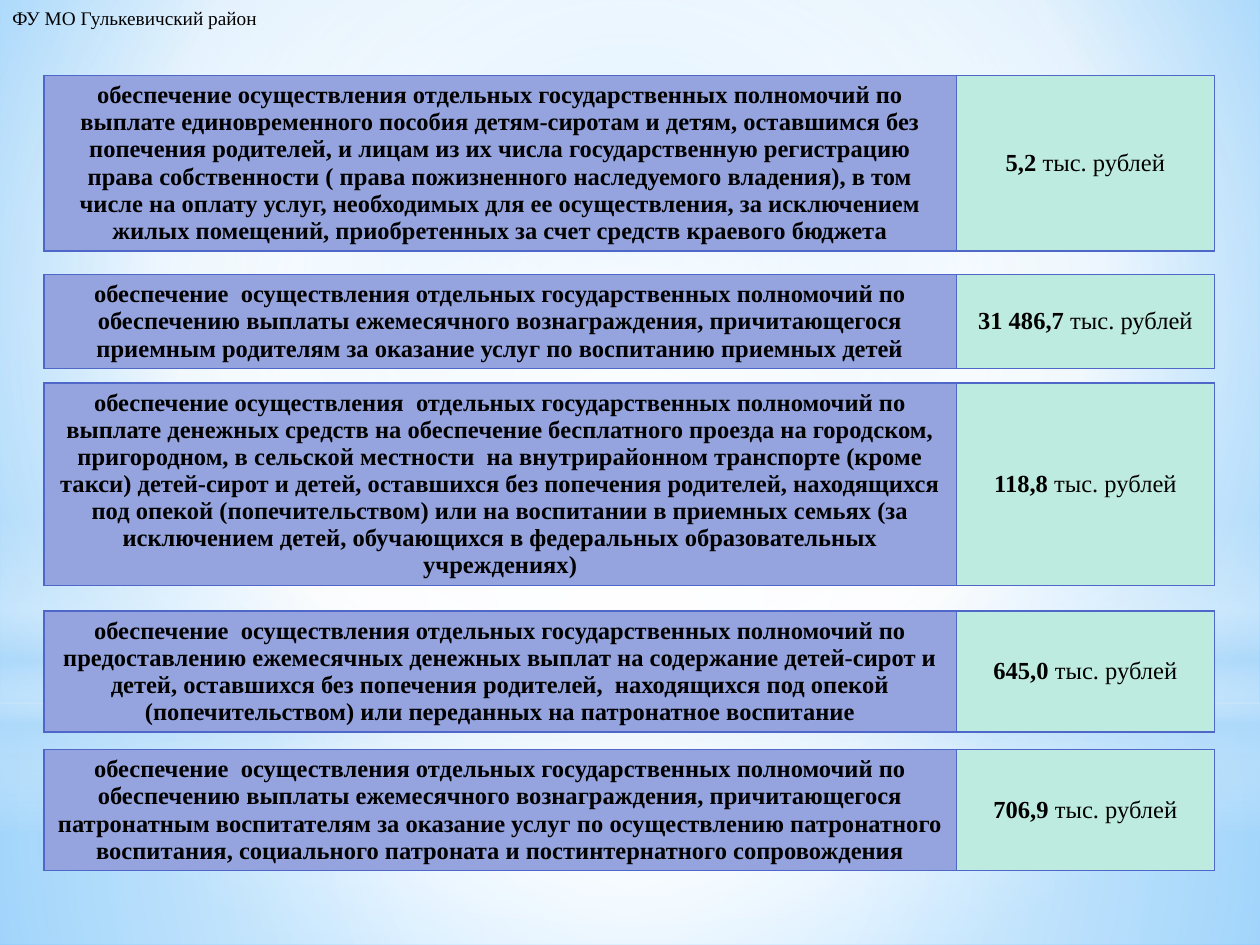
"""Build the slide of district budget powers with their funding amounts."""
from lxml import etree
from pptx import Presentation
from pptx.dml.color import RGBColor
from pptx.enum import shapes, text
from pptx.oxml import ns
from pptx.util import Inches, Pt

WHITE = RGBColor(0xFF, 0xFF, 0xFF)
SKY = RGBColor(0xB4, 0xDC, 0xFA)
BG_INNER = RGBColor(0x9E, 0xD5, 0xFF)
BG_OUTER = RGBColor(0x5B, 0xB9, 0xFF)
BORDER = RGBColor(0x4E, 0x67, 0xC8)
PURPOSE = RGBColor(0x95, 0xA4, 0xDE)
AMOUNT = RGBColor(0xBE, 0xEB, 0xDF)
BLACK = RGBColor(0, 0, 0)
FONT = "Times New Roman"
CENTRE = (50, 50, 50, 50)


def sub(parent, tag, **attrs):
    el = etree.SubElement(parent, ns.qn(tag))
    for key, value in attrs.items():
        el.set(key, str(value))
    return el


def set_gradient(fill, owner, stops, focus):
    fill.gradient()
    grad = owner.xpath(".//a:gradFill")[0]
    for child in list(grad):
        grad.remove(child)
    gs_list = sub(grad, "a:gsLst")
    for pos, color, alpha in stops:
        clr = sub(sub(gs_list, "a:gs", pos=pos * 1000), "a:srgbClr", val=color)
        if alpha < 100:
            sub(clr, "a:alpha", val=alpha * 1000)
    if focus:
        sides = {k: v * 1000 for k, v in zip("ltrb", focus)}
        sub(sub(grad, "a:path", path="circle"), "a:fillToRect", **sides)
    else:
        sub(grad, "a:lin", ang=90 * 60000, scaled=0)


prs = Presentation()
prs.slide_width, prs.slide_height = Inches(10), Inches(7.5)
s = prs.slides.add_slide(prs.slide_layouts[6])

set_gradient(s.background.fill, s.element,
             [(0, BG_INNER, 100), (60, WHITE, 100), (100, BG_OUTER, 100)],
             (20, 10, 20, 60))

RECT, OVAL = shapes.MSO_SHAPE.RECTANGLE, shapes.MSO_SHAPE.OVAL
glows = [
    (RECT, 5.58, 1.92, CENTRE, [(0, WHITE, 91), (37, WHITE, 76), (100, SKY, 79)]),
    (RECT, 0, 5.58, CENTRE, [(0, WHITE, 89), (48, WHITE, 62), (100, SKY, 79)]),
    (RECT, 4.12, 2.5, None, [(0, WHITE, 0), (29, WHITE, 30), (45, SKY, 40),
                             (55, WHITE, 26), (65, SKY, 60), (100, WHITE, 0)]),
    (OVAL, 1.75, 5.58, CENTRE, [(0, WHITE, 100), (56, WHITE, 0)]),
]
for kind, top, height, focus, stops in glows:
    sp = s.shapes.add_shape(kind, 0, Inches(top), prs.slide_width, Inches(height))
    sp.shadow.inherit = False
    sp.line.fill.background()
    set_gradient(sp.fill, sp.element, stops, focus)

rows = [
    (0.6, 1.5, "обеспечение осуществления отдельных государственных полномочий по "
     "выплате единовременного пособия детям-сиротам и детям, оставшимся без "
     "попечения родителей, и лицам из их числа государственную регистрацию "
     "права собственности ( права пожизненного наследуемого владения), в том "
     "числе на оплату услуг, необходимых для ее осуществления, за исключением "
     "жилых помещений, приобретенных за счет средств краевого бюджета", "5,2"),
    (2.18, 0.8, "обеспечение  осуществления отдельных государственных полномочий по "
     "обеспечению выплаты ежемесячного вознаграждения, причитающегося "
     "приемным родителям за оказание услуг по воспитанию приемных детей", "31 486,7"),
    (3.04, 1.73, "обеспечение осуществления  отдельных государственных полномочий по "
     "выплате денежных средств на обеспечение бесплатного проезда на городском, "
     "пригородном, в сельской местности  на внутрирайонном транспорте (кроме "
     "такси) детей-сирот и детей, оставшихся без попечения родителей, находящихся "
     "под опекой (попечительством) или на воспитании в приемных семьях (за "
     "исключением детей, обучающихся в федеральных образовательных "
     "учреждениях)", "118,8"),
    (4.85, 1.03, "обеспечение  осуществления отдельных государственных полномочий по "
     "предоставлению ежемесячных денежных выплат на содержание детей-сирот и "
     "детей, оставшихся без попечения родителей,  находящихся под опекой "
     "(попечительством) или переданных на патронатное воспитание", "645,0"),
    (5.95, 1.03, "обеспечение  осуществления отдельных государственных полномочий по "
     "обеспечению выплаты ежемесячного вознаграждения, причитающегося "
     "патронатным воспитателям за оказание услуг по осуществлению патронатного "
     "воспитания, социального патроната и постинтернатного сопровождения", "706,9"),
]
for top, height, purpose, amount in rows:
    frame = s.shapes.add_table(1, 2, Inches(0.35), Inches(top), Inches(9.29), Inches(height))
    tbl = frame.table
    tbl.first_row = tbl.horz_banding = False
    tbl.rows[0].height = Inches(0.39)
    frame.height = Inches(height)
    cells = [(7.24, PURPOSE, [(purpose, True)]),
             (2.05, AMOUNT, [(amount, True), (" тыс. рублей", False)])]
    for i, (width, color, runs) in enumerate(cells):
        tbl.columns[i].width = Inches(width)
        cell = tbl.cell(0, i)
        cell.vertical_anchor = text.MSO_ANCHOR.MIDDLE
        tc_pr = cell._tc.get_or_add_tcPr()
        for side in "LRTB":
            ln = sub(tc_pr, f"a:ln{side}", w=Pt(1))
            sub(sub(ln, "a:solidFill"), "a:srgbClr", val=BORDER)
        cell.fill.solid()
        cell.fill.fore_color.rgb = color
        p = cell.text_frame.paragraphs[0]
        p.alignment = text.PP_ALIGN.CENTER
        for words, bold in runs:
            r = p.add_run()
            r.text = words
            r.font.color.rgb = BLACK
            for name, value in {"name": FONT, "size": Pt(14), "bold": bold}.items():
                setattr(r.font, name, value)

sp = s.shapes.add_textbox(0, 0, Inches(2.18), Inches(0.29))
tf = sp.text_frame
tf.word_wrap = False
tf.auto_size = text.MSO_AUTO_SIZE.SHAPE_TO_FIT_TEXT
r = tf.paragraphs[0].add_run()
r.text = "ФУ МО Гулькевичский район"
r.font.color.rgb = BLACK
for name, value in {"name": FONT, "size": Pt(11)}.items():
    setattr(r.font, name, value)

prs.save("out.pptx")
